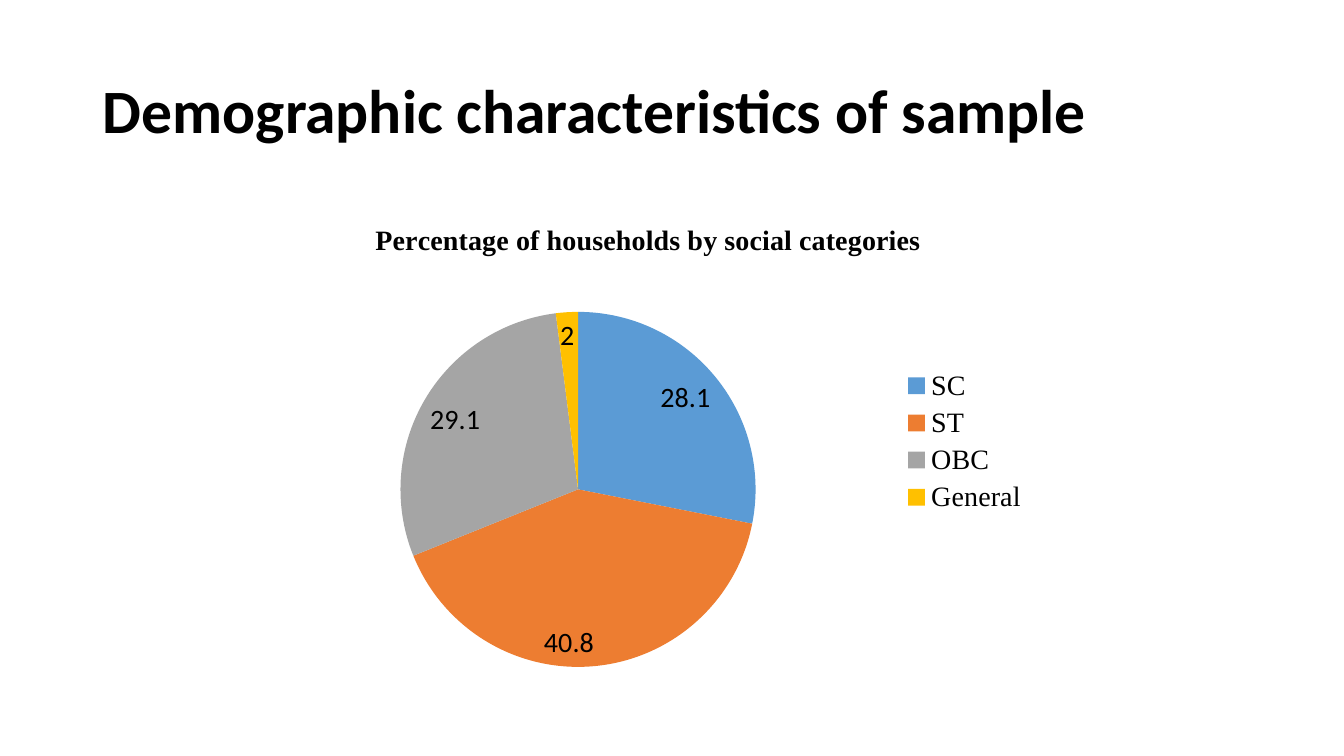
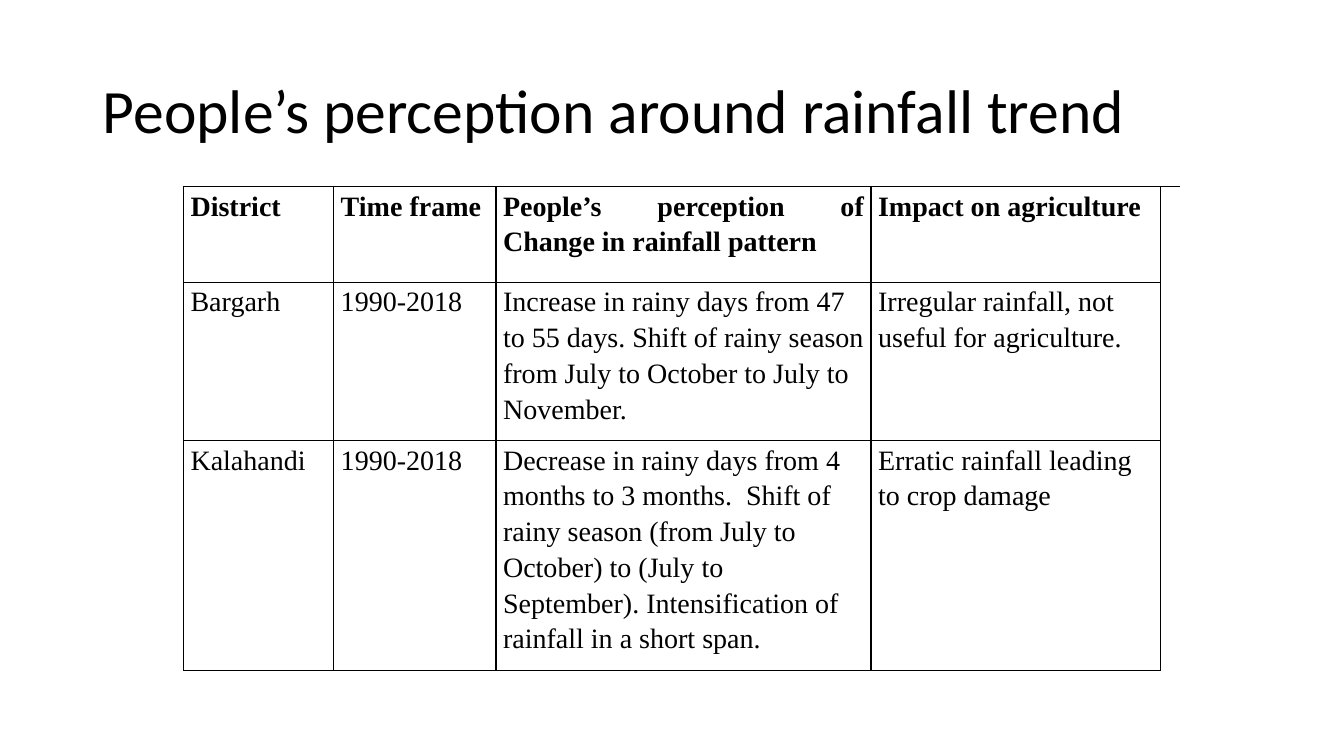
import lxml.etree
import pptx
import pptx.chart.data
import pptx.dml.color
import pptx.enum.chart
import pptx.enum.text
import pptx.oxml
import pptx.oxml.ns
import pptx.util

EMU_PER_PX = 9144
BLACK = "000000"
WHITE = "FFFFFF"
HEADING_FONT = "Calibri"
BODY_FONT = "Times New Roman"
BODY_SIZE = 20
TITLE_BOX = (92, 40, 1150, 145)

CATEGORY_SHARES = [
    ("SC", 28.1, "5B9BD5"),
    ("ST", 40.8, "ED7D31"),
    ("OBC", 29.1, "A5A5A5"),
    ("General", 2, "FFC000"),
]

COLUMN_WIDTHS = [149, 161, 372, 287, 19]
ROW_HEIGHTS = [95, 157, 228]
RAINFALL_ROWS = [
    ["District", "Time frame", "People’s perception of Change in rainfall pattern",
     "Impact on agriculture", ""],
    ["Bargarh", "1990-2018",
     "Increase in rainy days from 47 to 55 days. Shift of rainy season from July to October "
     "to July to November.",
     "Irregular rainfall, not useful for agriculture.", ""],
    ["Kalahandi", "1990-2018",
     "Decrease in rainy days from 4 months to 3 months.  Shift of rainy season (from July to "
     "October) to (July to September). Intensification of rainfall in a short span.",
     "Erratic rainfall leading to crop damage", ""],
]


def px(length):
    return pptx.util.Emu(length * EMU_PER_PX)


def color(value):
    return pptx.dml.color.RGBColor.from_string(value)


def style_font(font, size, name, bold=False):
    font.size = pptx.util.Pt(size)
    font.name = name
    font.bold = bold
    font.color.rgb = color(BLACK)


def add_run(paragraph, text, size, name, bold=False):
    run = paragraph.add_run()
    run.text = text
    style_font(run.font, size, name, bold)


def add_titled_slide(deck, heading, bold=False):
    slide = deck.slides.add_slide(deck.slide_layouts[5])
    title = slide.shapes.title
    title.left, title.top, title.width, title.height = map(px, TITLE_BOX)
    frame = title.text_frame
    frame.word_wrap = True
    frame.auto_size = pptx.enum.text.MSO_AUTO_SIZE.NONE
    frame.vertical_anchor = pptx.enum.text.MSO_ANCHOR.MIDDLE
    paragraph = frame.paragraphs[0]
    paragraph.alignment = pptx.enum.text.PP_ALIGN.LEFT
    paragraph.line_spacing = 0.9
    add_run(paragraph, heading, 44, HEADING_FONT, bold)
    return slide


def place_plot(chart, left, top, width, height):
    plot_area = chart.plots[0]._element.getparent()
    tag = pptx.oxml.ns.qn
    previous = plot_area.find(tag("c:layout"))
    if previous is not None:
        plot_area.remove(previous)
    layout = lxml.etree.Element(tag("c:layout"))
    manual = lxml.etree.SubElement(layout, tag("c:manualLayout"))
    settings = [("layoutTarget", "inner"), ("xMode", "edge"), ("yMode", "edge"),
                ("x", left), ("y", top), ("w", width), ("h", height)]
    for key, value in settings:
        lxml.etree.SubElement(manual, tag("c:" + key)).set("val", str(value))
    plot_area.insert(0, layout)


def add_category_pie(slide, left, top, width, height):
    names, shares, fills = zip(*CATEGORY_SHARES)
    data = pptx.chart.data.CategoryChartData()
    data.categories = names
    data.add_series("Series 1", shares)
    chart = slide.shapes.add_chart(
        pptx.enum.chart.XL_CHART_TYPE.PIE,
        px(left), px(top), px(width), px(height), data).chart
    style_font(chart.font, 10, HEADING_FONT)

    chart.has_title = True
    caption = chart.chart_title.text_frame.paragraphs[0]
    add_run(caption, "Percentage of households by social categories",
            BODY_SIZE, BODY_FONT, True)
    chart.chart_title.include_in_layout = False

    chart.has_legend = True
    chart.legend.position = pptx.enum.chart.XL_LEGEND_POSITION.RIGHT
    chart.legend.include_in_layout = False
    style_font(chart.legend.font, BODY_SIZE, BODY_FONT)

    pie = chart.plots[0]
    pie.vary_by_categories = True
    for index, fill in enumerate(fills):
        wedge = pie.series[0].points[index].format
        wedge.fill.solid()
        wedge.fill.fore_color.rgb = color(fill)
        wedge.line.fill.background()
    pie.has_data_labels = True
    labels = pie.data_labels
    labels.show_value = True
    labels.show_percentage = False
    labels.position = pptx.enum.chart.XL_LABEL_POSITION.INSIDE_END
    style_font(labels.font, BODY_SIZE, HEADING_FONT)
    place_plot(chart, 0.18, 0.23, 0.46, 0.74)


def set_borders(cell, visible_sides):
    properties = cell._tc.get_or_add_tcPr()
    namespace = pptx.oxml.ns.nsdecls("a")
    for position, side in enumerate("LRTB"):
        paint = "<a:noFill/>"
        if side in visible_sides:
            paint = f'<a:solidFill><a:srgbClr val="{BLACK}"/></a:solidFill>'
        border = pptx.oxml.parse_xml(f'<a:ln{side} {namespace} w="12700">{paint}</a:ln{side}>')
        properties.insert(position, border)


def fill_cell(cell, text, heading, justified):
    cell.margin_left = cell.margin_right = px(7)
    cell.margin_top = cell.margin_bottom = 0
    cell.fill.solid()
    cell.fill.fore_color.rgb = color(WHITE)
    if not text:
        set_borders(cell, "LT" if heading else "L")
        return
    set_borders(cell, "LRTB")
    paragraph = cell.text_frame.paragraphs[0]
    align = pptx.enum.text.PP_ALIGN
    paragraph.alignment = align.JUSTIFY if justified else align.LEFT
    paragraph.line_spacing = 1.15
    paragraph.space_after = pptx.util.Pt(0 if heading else 10)
    add_run(paragraph, text, BODY_SIZE, BODY_FONT, heading)


def add_rainfall_table(slide, left, top):
    table = slide.shapes.add_table(
        len(ROW_HEIGHTS), len(COLUMN_WIDTHS), px(left), px(top),
        px(sum(COLUMN_WIDTHS)), px(sum(ROW_HEIGHTS))).table
    table.first_row = False
    table.horz_banding = False
    for column, width in zip(table.columns, COLUMN_WIDTHS):
        column.width = px(width)
    for row_index, (row, height) in enumerate(zip(table.rows, ROW_HEIGHTS)):
        row.height = px(height)
        heading = row_index == 0
        for column_index, text in enumerate(RAINFALL_ROWS[row_index]):
            fill_cell(row.cells[column_index], text, heading, heading or column_index < 2)


def main():
    deck = pptx.Presentation()
    deck.slide_width, deck.slide_height = px(1333), px(750)
    demographics = add_titled_slide(deck, "Demographic characteristics of sample", True)
    add_category_pie(demographics, 256, 200, 774, 476)
    rainfall = add_titled_slide(deck, "People’s perception around rainfall trend")
    add_rainfall_table(rainfall, 182, 185)
    deck.save("out.pptx")


if __name__ == "__main__":
    main()
